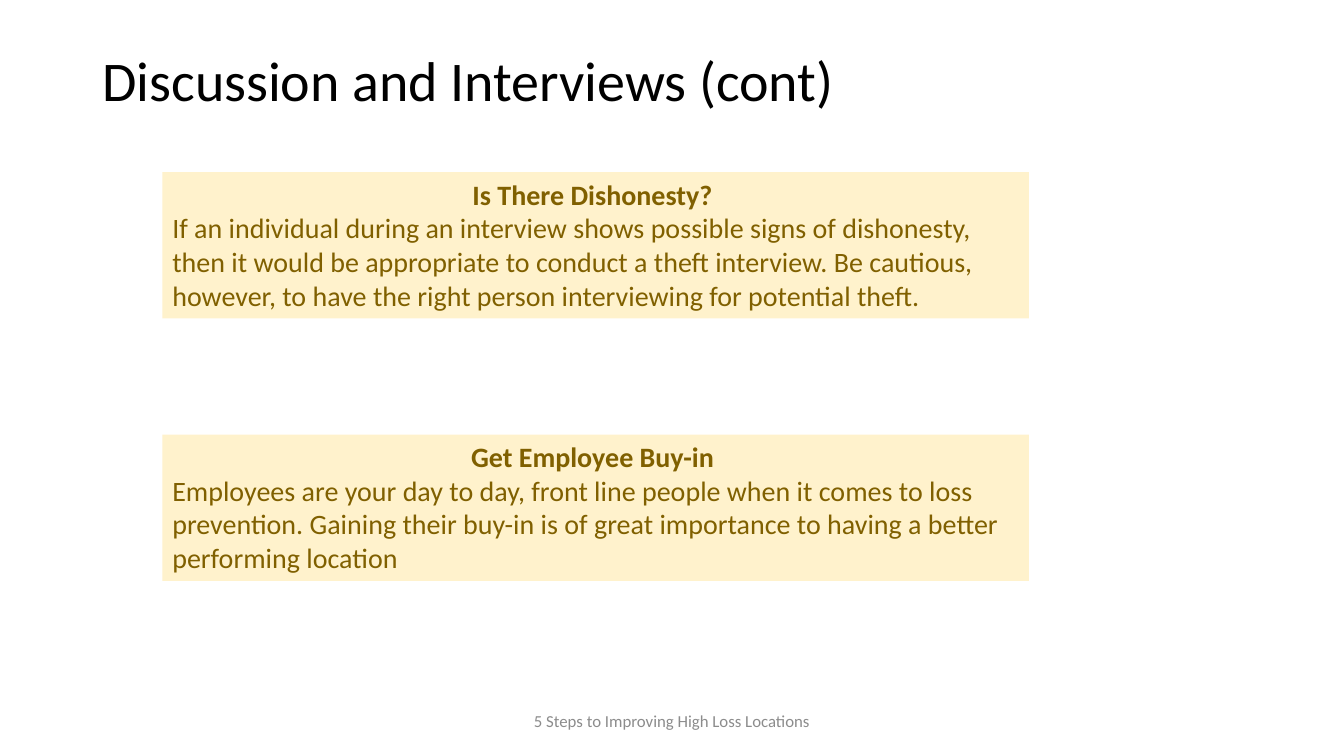
import dataclasses

import pptx
import pptx.dml.color
import pptx.enum.shapes
import pptx.enum.text
import pptx.util

Pt = pptx.util.Pt
Align = pptx.enum.text.PP_ALIGN
Anchor = pptx.enum.text.MSO_ANCHOR


@dataclasses.dataclass(frozen=True)
class Theme:
    font: str = "Calibri"
    title_color: str = "000000"
    footer_color: str = "8C8C8C"
    advice_color: str = "806000"
    advice_fill: str = "FFF2CC"
    title_size: int = 40
    advice_size: int = 20
    footer_size: int = 12


class SlideBuilder:
    def __init__(self, slide, theme):
        self.slide = slide
        self.theme = theme

    def add_text(self, paragraph, text, size, color, bold=False, align=Align.LEFT):
        paragraph.alignment = align
        run = paragraph.add_run()
        run.text = text
        run.font.name = self.theme.font
        run.font.size = Pt(size)
        run.font.bold = bold
        run.font.color.rgb = pptx.dml.color.RGBColor.from_string(color)

    def label(self, text, left, top, width, height, size, color, align=Align.LEFT, spacing=1.0):
        frame = self.slide.shapes.add_textbox(Pt(left), Pt(top), Pt(width), Pt(height)).text_frame
        frame.word_wrap = True
        frame.vertical_anchor = Anchor.MIDDLE
        paragraph = frame.paragraphs[0]
        paragraph.line_spacing = spacing
        self.add_text(paragraph, text, size, color, align=align)

    def advice(self, heading, body, left, top, width, height):
        theme = self.theme
        panel = self.slide.shapes.add_shape(
            pptx.enum.shapes.MSO_SHAPE.RECTANGLE, Pt(left), Pt(top), Pt(width), Pt(height))
        panel.shadow.inherit = False
        panel.fill.solid()
        panel.fill.fore_color.rgb = pptx.dml.color.RGBColor.from_string(theme.advice_fill)
        panel.line.fill.background()
        frame = panel.text_frame
        frame.word_wrap = True
        frame.auto_size = pptx.enum.text.MSO_AUTO_SIZE.SHAPE_TO_FIT_TEXT
        frame.vertical_anchor = Anchor.TOP
        self.add_text(frame.paragraphs[0], heading, theme.advice_size, theme.advice_color,
                      bold=True, align=Align.CENTER)
        self.add_text(frame.add_paragraph(), body, theme.advice_size, theme.advice_color)


ADVICE = [
    ("Is There Dishonesty? ",
     "If an individual during an interview shows possible signs of dishonesty, then it would be "
     "appropriate to conduct a theft interview. Be cautious, however, to have the right person "
     "interviewing for potential theft."),
    ("Get Employee Buy-in ",
     "Employees are your day to day, front line people when it comes to loss prevention. Gaining "
     "their buy-in is of great importance to having a better performing location"),
]
ADVICE_TOP = 123
ADVICE_PITCH = 187.5


def main():
    presentation = pptx.Presentation()
    presentation.slide_width = Pt(960)
    presentation.slide_height = Pt(540)
    theme = Theme()
    builder = SlideBuilder(presentation.slides.add_slide(presentation.slide_layouts[6]), theme)

    builder.label("Discussion and Interviews (cont)", 66, 29, 547, 61,
                  theme.title_size, theme.title_color, spacing=0.9)
    builder.label("5 Steps to Improving High Loss Locations", 318, 500.5, 324, 29,
                  theme.footer_size, theme.footer_color, align=Align.CENTER)
    for index, (heading, body) in enumerate(ADVICE):
        builder.advice(heading, body, 116, ADVICE_TOP + index * ADVICE_PITCH, 619, 104.5)

    presentation.save("out.pptx")


if __name__ == "__main__":
    main()
